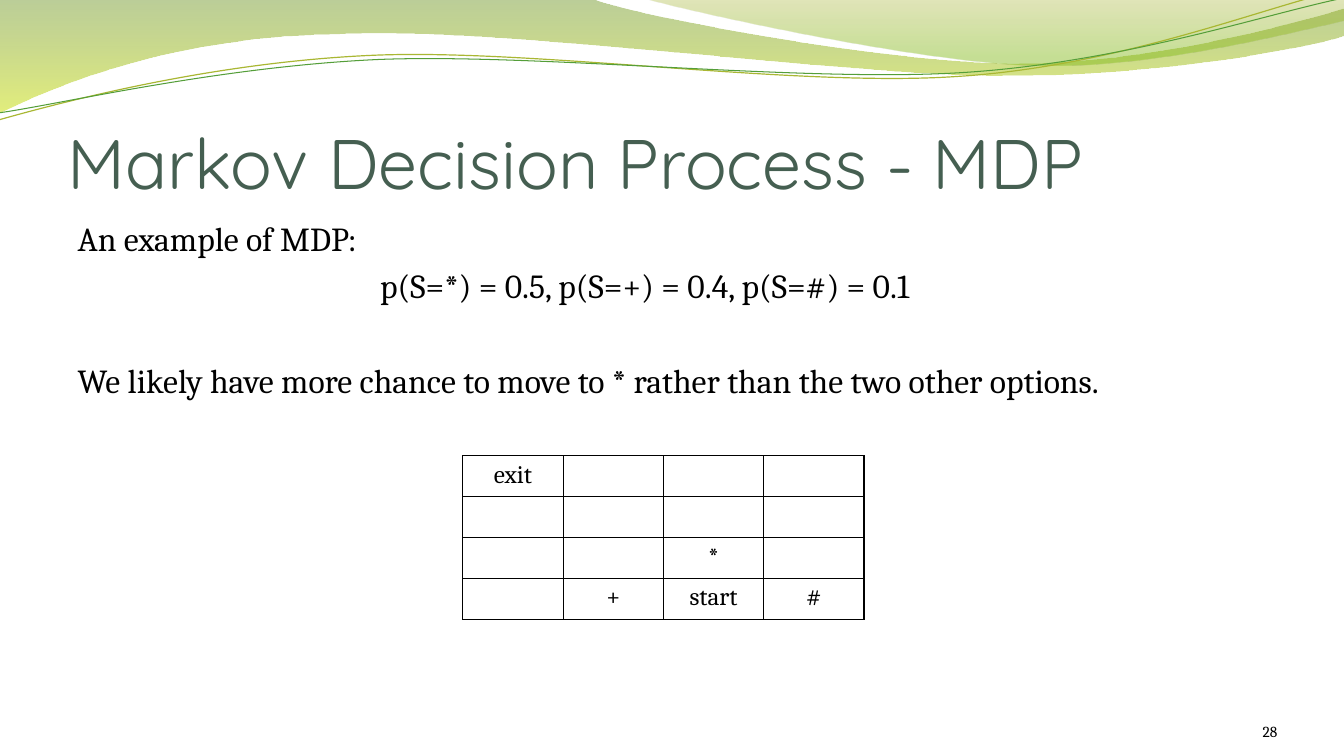
from math import cos, radians, sin

from lxml.etree import SubElement
from pptx import Presentation
from pptx.dml.color import RGBColor
from pptx.enum.text import MSO_ANCHOR, MSO_AUTO_SIZE, PP_ALIGN
from pptx.oxml.ns import qn
from pptx.util import Inches, Pt

LEFT, CENTER, RIGHT = PP_ALIGN.LEFT, PP_ALIGN.CENTER, PP_ALIGN.RIGHT
TOP, BOTTOM = MSO_ANCHOR.TOP, MSO_ANCHOR.BOTTOM
FIXED = MSO_AUTO_SIZE.NONE
SERIF, BLACK = "Cambria", "000000"
TILT = 2.7
MIDDLE = (6.66, 0.58)

# Each band: outline, then gradient stops as (position, colour, opacity in %).
# A pair in an outline is a straight step, six numbers are a Bezier curve.
BANDS = [
    ([(0, 0), (5.87, -0.01),
      (6.34, 0.17, 8.84, 0.63, 10.11, 0.63),
      (11.37, 0.63, 12.77, 0.26, 13.33, 0.09), (13.34, 0.36),
      (13.11, 0.44, 11.59, 0.76, 9.94, 0.75),
      (8.29, 0.75, 5.09, 0.28, 3.43, 0.34),
      (1.72, 0.36, 0.61, 0.83, -0.02, 1.13), (0, 0)],
     [(0, "69921C", 45), (1, "CCE10F", 55)]),
    ([(6.38, -0.01),
      (6.79, 0.11, 9.09, 0.62, 10.25, 0.65),
      (11.4, 0.69, 12.82, 0.32, 13.33, 0.21), (13.33, 0), (6.38, -0.01)],
     [(0, "9BAA1A", 30), (0.8, "81BA16", 45)]),
]
CURVES = [
    ([(-0.01, 1.19),
      (0.63, 1.01, 2.1, 0.62, 3.69, 0.55),
      (5.27, 0.48, 7.89, 0.87, 9.49, 0.76),
      (11.1, 0.66, 12.51, 0.08, 13.3, -0.1)], "A9B733", 0.85),
    ([(-0.01, 1.12),
      (0.62, 1.03, 2.18, 0.66, 3.77, 0.59),
      (5.37, 0.53, 7.96, 0.82, 9.55, 0.72),
      (11.14, 0.62, 12.55, 0.14, 13.33, -0.02)], "549E39", 0.75),
]
# Text, space before in points, left indent in inches
LINES = [
    ("An example of MDP:", 4.8, 0),
    ("p(S=*) = 0.5, p(S=+) = 0.4, p(S=#) = 0.1", 4.8, 3),
    ("We likely have more chance to move to * rather than the two other options.",
     39, 0),
]
GRID = [
    ["exit", "", "", ""],
    ["", "", "", ""],
    ["", "", "*", ""],
    ["", "+", "start", "#"],
]


def color(text):
    return RGBColor.from_string(text)


def apply(item, values):
    for name, value in values.items():
        setattr(item, name, value)


def place(shape, box):
    names = ("left", "top", "width", "height")
    apply(shape, dict(zip(names, map(Inches, box))))


def write(para, text, size, font=SERIF, ink=BLACK, align=LEFT):
    para.alignment = align
    run = para.add_run()
    run.text = text
    apply(run.font, {"size": Pt(size), "name": font})
    run.font.color.rgb = color(ink)


def turn(x, y, angle):
    """Turn a point clockwise about the middle of the waves."""
    a, dx, dy = radians(angle), x - MIDDLE[0], y - MIDDLE[1]
    return (MIDDLE[0] + dx * cos(a) - dy * sin(a),
            MIDDLE[1] + dx * sin(a) + dy * cos(a))


def draw(slide, box, outline, close=False, tilt=0):
    """Draw an outline, tilted against the clock, with true Bezier curves."""
    spots = []
    for step in outline:
        for x, y in zip(step[::2], step[1::2]):
            x, y = turn(x, y, tilt)
            spots.append((Inches(box[0] + x), Inches(box[1] + y)))
    maker = slide.shapes.build_freeform(*spots[0])
    maker.add_line_segments(spots[1:], close=close)
    shape = maker.convert_to_shape()
    shape.shadow.inherit = False
    shape.rotation = -tilt % 360
    lines = iter(list(shape.element.iter(qn("a:lnTo"))))
    for step in outline[1:]:
        first = next(lines)
        if len(step) == 6:
            curve = SubElement(first.getparent(), qn("a:cubicBezTo"))
            first.addprevious(curve)
            for line in (first, next(lines), next(lines)):
                curve.append(line[0])
                line.getparent().remove(line)
    return shape


def add_waves(slide, box):
    for outline, stops in BANDS:
        band = draw(slide, box, outline, close=True)
        band.line.fill.background()
        band.fill.gradient()
        band.fill.gradient_angle = 270
        for stop, (spot, tint, _) in zip(band.fill.gradient_stops, stops):
            stop.position = spot
            stop.color.rgb = color(tint)
        for node, (_, _, alpha) in zip(band.element.iter(qn("a:srgbClr")), stops):
            SubElement(node, qn("a:alpha"), val=str(alpha * 1000))
    for outline, tint, width in CURVES:
        curve = draw(slide, box, outline, tilt=TILT)
        curve.fill.background()
        curve.line.color.rgb = color(tint)
        curve.line.width = Pt(width)


def add_title(slide, box):
    title = slide.shapes.title
    slide.shapes.element.append(title.element)
    place(title, box)
    frame = title.text_frame
    apply(frame, {"auto_size": FIXED, "word_wrap": True, "vertical_anchor": BOTTOM,
                  "margin_left": 0, "margin_right": 0, "margin_bottom": 0})
    write(frame.paragraphs[0], "Markov Decision Process - MDP", 50,
          "Quicksand", "455F51")


def add_body(slide, box):
    body = slide.placeholders[1]
    slide.shapes.element.append(body.element)
    place(body, box)
    frame = body.text_frame
    apply(frame, {"auto_size": FIXED, "word_wrap": True, "vertical_anchor": TOP})
    for i, (text, space, indent) in enumerate(LINES):
        para = frame.add_paragraph() if i else frame.paragraphs[0]
        write(para, text, 24)
        para.space_before = Pt(space)
        props = para._p.get_or_add_pPr()
        props.set("marL", str(Inches(indent)))
        props.set("indent", "0")
        SubElement(props, qn("a:buNone"))


def rule(cell):
    """Draw the four borders of a cell."""
    props = cell._tc.get_or_add_tcPr()
    for i, side in enumerate(("lnL", "lnR", "lnT", "lnB")):
        line = SubElement(props, qn("a:" + side), w=str(Pt(1)))
        props.insert(i, line)
        fill = SubElement(line, qn("a:solidFill"))
        SubElement(fill, qn("a:srgbClr"), val=BLACK)


def add_grid(slide, box):
    rows, cols = len(GRID), len(GRID[0])
    table = slide.shapes.add_table(rows, cols, *map(Inches, box)).table
    apply(table, {"first_row": False, "horz_banding": False})
    for r, row in enumerate(GRID):
        for c, text in enumerate(row):
            cell = table.cell(r, c)
            cell.fill.background()
            rule(cell)
            if text:
                write(cell.text_frame.paragraphs[0], text, 18, align=CENTER)


def add_number(slide, box):
    frame = slide.shapes.add_textbox(*map(Inches, box)).text_frame
    apply(frame, {"word_wrap": True, "vertical_anchor": BOTTOM, "margin_left": 0,
                  "margin_right": 0, "margin_top": 0, "margin_bottom": 0})
    write(frame.paragraphs[0], "28", 11, align=RIGHT)


def main():
    deck = Presentation()
    apply(deck, {"slide_width": Inches(13.33), "slide_height": Inches(7.5)})
    slide = deck.slides.add_slide(deck.slide_layouts[1])
    add_waves(slide, (0, 0))
    add_title(slide, (0.67, 0.77, 12, 1.25))
    add_body(slide, (0.67, 2.11, 12, 4.8))
    add_grid(slide, (4.59, 4.52, 3.98, 1.61))
    add_number(slide, (11.56, 6.95, 1.11, 0.4))
    deck.save("out.pptx")


if __name__ == "__main__":
    main()
